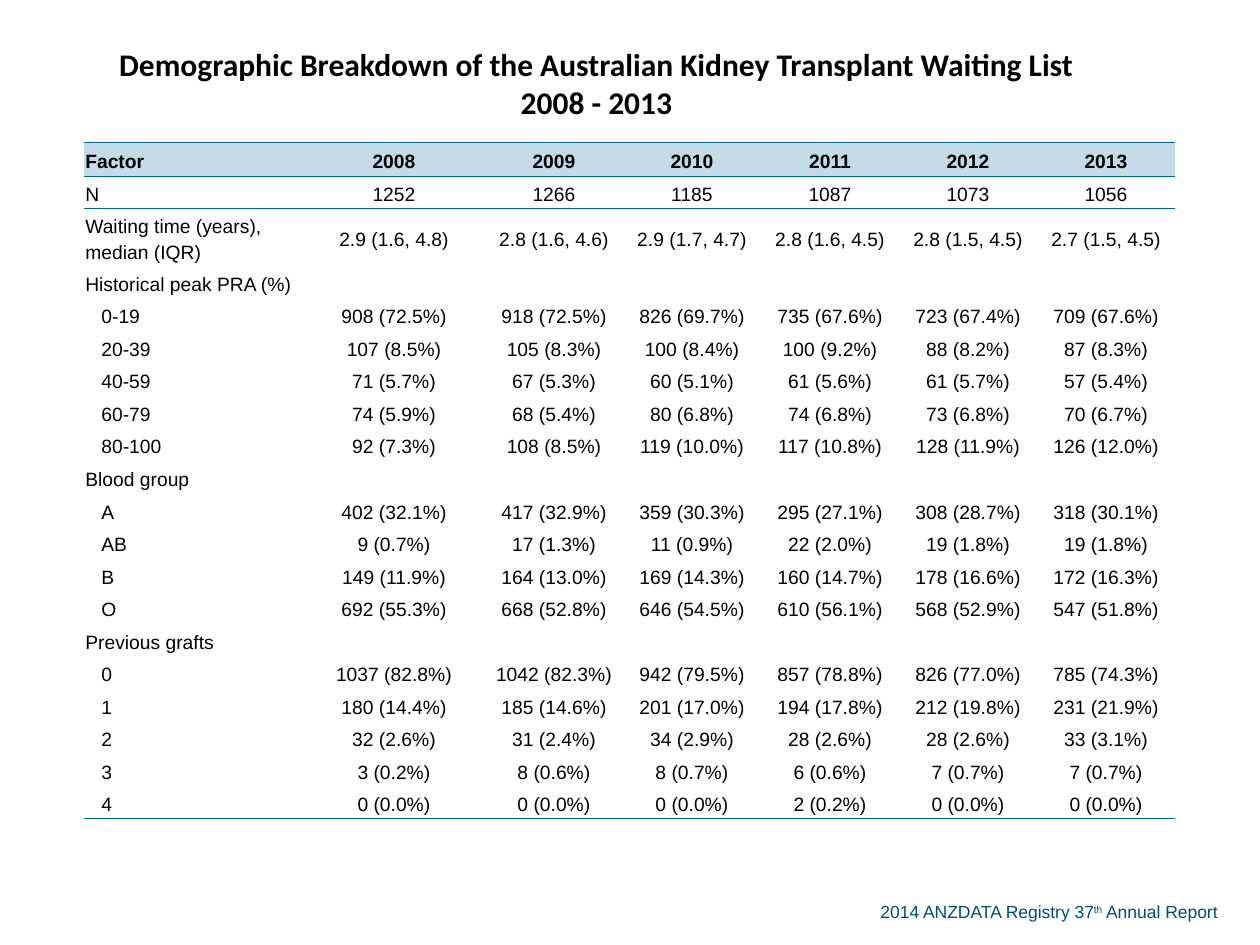
"""Build the slide on the Australian kidney transplant waiting list."""
from lxml import etree
from pptx import Presentation
from pptx.dml.color import RGBColor
from pptx.enum.text import MSO_ANCHOR, PP_ALIGN
from pptx.oxml.ns import qn
from pptx.util import Pt

LEFT, CENTER = PP_ALIGN.LEFT, PP_ALIGN.CENTER
MIDDLE = MSO_ANCHOR.MIDDLE
NO_STYLE = "{2D5ABB26-0587-4C30-8999-92F81FD0307C}"

THEME = {
    "title_font": "Calibri", "body_font": "Arial",
    "title_size": 18, "body_size": 11, "footer_size": 10,
    "text": "000000", "footer": "004D73", "header": "C2DBE7", "rule": "006699",
}

TITLE = ["Demographic Breakdown of the Australian Kidney Transplant Waiting List", "2008 - 2013"]
HEADER = ["Factor", "2008", "2009", "2010", "2011", "2012", "2013"]
SUMMARY = [
    ["N", "1252", "1266", "1185", "1087", "1073", "1056"],
    ["Waiting time (years),\vmedian (IQR)", "2.9 (1.6, 4.8)", "2.8 (1.6, 4.6)", "2.9 (1.7, 4.7)",
     "2.8 (1.6, 4.5)", "2.8 (1.5, 4.5)", "2.7 (1.5, 4.5)"],
]
GROUPS = {
    "Historical peak PRA (%)": [
        ["0-19", "908 (72.5%)", "918 (72.5%)", "826 (69.7%)", "735 (67.6%)", "723 (67.4%)", "709 (67.6%)"],
        ["20-39", "107 (8.5%)", "105 (8.3%)", "100 (8.4%)", "100 (9.2%)", "88 (8.2%)", "87 (8.3%)"],
        ["40-59", "71 (5.7%)", "67 (5.3%)", "60 (5.1%)", "61 (5.6%)", "61 (5.7%)", "57 (5.4%)"],
        ["60-79", "74 (5.9%)", "68 (5.4%)", "80 (6.8%)", "74 (6.8%)", "73 (6.8%)", "70 (6.7%)"],
        ["80-100", "92 (7.3%)", "108 (8.5%)", "119 (10.0%)", "117 (10.8%)", "128 (11.9%)", "126 (12.0%)"],
    ],
    "Blood group": [
        ["A", "402 (32.1%)", "417 (32.9%)", "359 (30.3%)", "295 (27.1%)", "308 (28.7%)", "318 (30.1%)"],
        ["AB", "9 (0.7%)", "17 (1.3%)", "11 (0.9%)", "22 (2.0%)", "19 (1.8%)", "19 (1.8%)"],
        ["B", "149 (11.9%)", "164 (13.0%)", "169 (14.3%)", "160 (14.7%)", "178 (16.6%)", "172 (16.3%)"],
        ["O", "692 (55.3%)", "668 (52.8%)", "646 (54.5%)", "610 (56.1%)", "568 (52.9%)", "547 (51.8%)"],
    ],
    "Previous grafts": [
        ["0", "1037 (82.8%)", "1042 (82.3%)", "942 (79.5%)", "857 (78.8%)", "826 (77.0%)", "785 (74.3%)"],
        ["1", "180 (14.4%)", "185 (14.6%)", "201 (17.0%)", "194 (17.8%)", "212 (19.8%)", "231 (21.9%)"],
        ["2", "32 (2.6%)", "31 (2.4%)", "34 (2.9%)", "28 (2.6%)", "28 (2.6%)", "33 (3.1%)"],
        ["3", "3 (0.2%)", "8 (0.6%)", "8 (0.7%)", "6 (0.6%)", "7 (0.7%)", "7 (0.7%)"],
        ["4", "0 (0.0%)", "0 (0.0%)", "0 (0.0%)", "2 (0.2%)", "0 (0.0%)", "0 (0.0%)"],
    ],
}
FOOTER = [("2014 ANZDATA Registry 37", 0), ("th", 30000), (" Annual Report", 0)]

TABLE_LEFT, TABLE_TOP = 48, 14.4
COLUMN_WIDTHS = [125.2, 104] + [78.86] * 5
TITLE_HEIGHT, HEADER_HEIGHT, ROW_HEIGHT, TALL_ROW_HEIGHT = 67, 19.4, 18.6, 32.4
INSET, INDENT, TITLE_SHIFT = 0.75, 9.2, 37.7


def style_run(r, font, size, color, bold=False):
    r.font.name, r.font.size, r.font.bold = font, Pt(size), bold
    r.font.color.rgb = RGBColor.from_string(color)


def add_rules(cell, *sides):
    tc_pr = cell._tc.get_or_add_tcPr()
    for i, side in enumerate(sides):
        ln = etree.Element(qn(f"a:ln{side}"), w=str(Pt(0.5)))
        fill = etree.SubElement(ln, qn("a:solidFill"))
        etree.SubElement(fill, qn("a:srgbClr"), val=THEME["rule"])
        tc_pr.insert(i, ln)


def prepare_cell(cell, indent=0):
    cell.vertical_anchor = MIDDLE
    cell.margin_left = Pt(INSET + indent)
    cell.margin_right = cell.margin_top = Pt(INSET)
    cell.margin_bottom = 0
    cell.fill.background()


def fill_cell(cell, text, align, bold=False, indent=0):
    prepare_cell(cell, indent)
    cell.text = text
    p = cell.text_frame.paragraphs[0]
    p.alignment, p.line_spacing = align, 1.19
    for r in p.runs:
        style_run(r, THEME["body_font"], THEME["body_size"], THEME["text"], bold)
    if not text:
        p._p.get_or_add_endParaRPr().set("sz", str(THEME["body_size"] * 100))


def fill_title(cell):
    prepare_cell(cell)
    cell.text = "\n".join(TITLE)
    for p in cell.text_frame.paragraphs:
        p.alignment = CENTER
        style_run(p.runs[0], THEME["title_font"], THEME["title_size"], THEME["text"], True)
    cell.text_frame.paragraphs[0]._p.get_or_add_pPr().set("marR", str(Pt(TITLE_SHIFT)))


def add_waiting_list_table(s):
    rows = [(HEADER, 0)] + [(row, 0) for row in SUMMARY]
    for group, members in GROUPS.items():
        rows.append(([group] + [""] * (len(HEADER) - 1), 0))
        rows += [(row, INDENT) for row in members]
    heights = [TITLE_HEIGHT, HEADER_HEIGHT] + [
        TALL_ROW_HEIGHT if "\v" in row[0] else ROW_HEIGHT for row, _ in rows[1:]]

    frame = s.shapes.add_table(len(heights), len(HEADER), Pt(TABLE_LEFT), Pt(TABLE_TOP),
                               Pt(sum(COLUMN_WIDTHS)), Pt(sum(heights)))
    table = frame.table
    table.first_row = table.horz_banding = False
    table._tbl.tblPr.find(qn("a:tableStyleId")).text = NO_STYLE
    for column, width in zip(table.columns, COLUMN_WIDTHS):
        column.width = Pt(width)
    for row, height in zip(table.rows, heights):
        row.height = Pt(height)

    table.cell(0, 0).merge(table.cell(0, len(HEADER) - 1))
    fill_title(table.cell(0, 0))
    for i, (values, indent) in enumerate(rows, 1):
        for j, value in enumerate(values):
            align = CENTER if j else LEFT
            fill_cell(table.cell(i, j), value, align, i == 1, 0 if j else indent)
    for j in range(len(HEADER)):
        header = table.cell(1, j)
        header.fill.solid()
        header.fill.fore_color.rgb = RGBColor.from_string(THEME["header"])
        add_rules(table.cell(0, j), "B")
        add_rules(header, "T", "B")
        add_rules(table.cell(2, j), "T")
        add_rules(table.cell(len(rows), j), "B")


def add_footer(s):
    tf = s.shapes.add_textbox(Pt(496), Pt(511.2), Pt(215.3), Pt(19.4)).text_frame
    tf.word_wrap = True
    p = tf.paragraphs[0]
    for text, baseline in FOOTER:
        r = p.add_run()
        r.text = text
        style_run(r, THEME["body_font"], THEME["footer_size"], THEME["footer"])
        if baseline:
            r.font._element.set("baseline", str(baseline))


def main():
    prs = Presentation()
    prs.slide_width, prs.slide_height = Pt(720), Pt(540)
    s = prs.slides.add_slide(prs.slide_layouts[6])
    add_footer(s)
    add_waiting_list_table(s)
    prs.save("out.pptx")


if __name__ == "__main__":
    main()
